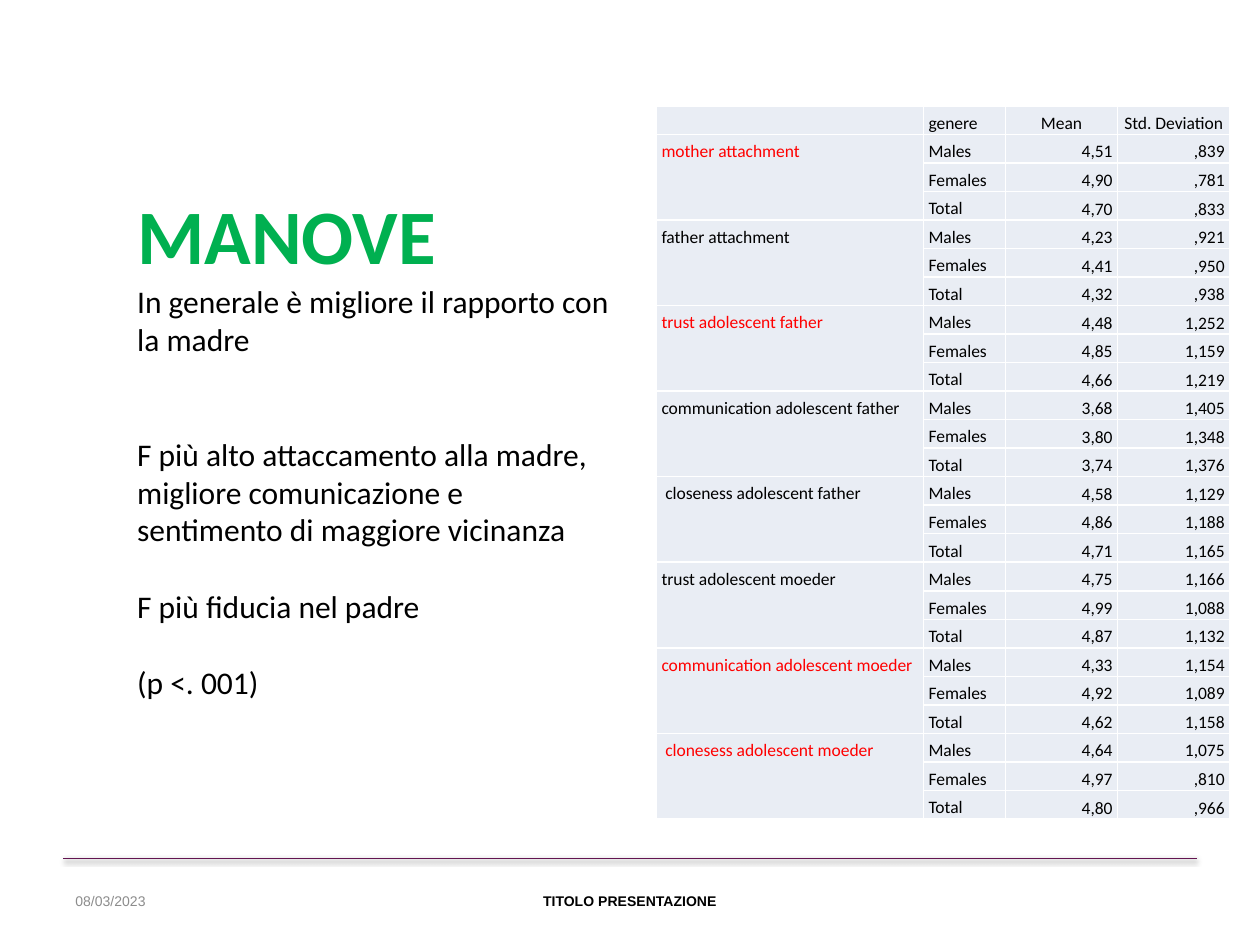
from dataclasses import dataclass

from lxml import etree
from pptx import Presentation
from pptx.dml.color import RGBColor
from pptx.enum.shapes import MSO_CONNECTOR
from pptx.enum.text import MSO_ANCHOR, MSO_AUTO_SIZE, PP_ALIGN
from pptx.oxml.ns import qn
from pptx.util import Inches, Pt

LEFT, CENTER, RIGHT = PP_ALIGN.LEFT, PP_ALIGN.CENTER, PP_ALIGN.RIGHT
TOP, MIDDLE, BOTTOM = MSO_ANCHOR.TOP, MSO_ANCHOR.MIDDLE, MSO_ANCHOR.BOTTOM
STRAIGHT = MSO_CONNECTOR.STRAIGHT
NO_AUTO_SIZE = MSO_AUTO_SIZE.NONE


@dataclass(frozen=True)
class Theme:
    text: RGBColor = RGBColor(0, 0, 0)
    title: RGBColor = RGBColor(0x00, 0xB0, 0x50)
    highlight: RGBColor = RGBColor(0xFF, 0, 0)
    muted: RGBColor = RGBColor(0x8C, 0x8C, 0x8C)
    rule: RGBColor = RGBColor(0x63, 0x14, 0x50)
    cell: RGBColor = RGBColor(0xE9, 0xED, 0xF4)
    border: str = "FFFFFF"
    main_font: str = "Calibri"
    footer_font: str = "Arial"
    title_size: int = 44
    body_size: int = 18
    table_size: int = 10
    table_leading: int = 16
    footer_size: int = 8


THEME = Theme()
TITLE = "MANOVE"
FINDINGS = [
    ("In generale è migliore il rapporto con la madre", 0),
    ("F più alto attaccamento alla madre, migliore comunicazione e "
     "sentimento di maggiore vicinanza", 44),
    ("F più fiducia nel padre", 22),
    ("(p <. 001)", 22),
]
HEADERS = ["", "genere", "Mean", "Std. Deviation"]
GENDERS = ["Males", "Females", "Total"]
COLUMN_WIDTHS = [2.12, 0.65, 0.89, 0.89]
CELL_INDENT, DEEP_INDENT = 0.04, 0.07
SCALES = [
    ("mother attachment", True, CELL_INDENT,
     [("4,51", ",839"), ("4,90", ",781"), ("4,70", ",833")]),
    ("father attachment", False, CELL_INDENT,
     [("4,23", ",921"), ("4,41", ",950"), ("4,32", ",938")]),
    ("trust adolescent father", True, CELL_INDENT,
     [("4,48", "1,252"), ("4,85", "1,159"), ("4,66", "1,219")]),
    ("communication adolescent father", False, CELL_INDENT,
     [("3,68", "1,405"), ("3,80", "1,348"), ("3,74", "1,376")]),
    ("closeness adolescent father", False, DEEP_INDENT,
     [("4,58", "1,129"), ("4,86", "1,188"), ("4,71", "1,165")]),
    ("trust adolescent moeder", False, CELL_INDENT,
     [("4,75", "1,166"), ("4,99", "1,088"), ("4,87", "1,132")]),
    ("communication adolescent moeder", True, CELL_INDENT,
     [("4,33", "1,154"), ("4,92", "1,089"), ("4,62", "1,158")]),
    ("clonesess adolescent moeder", True, DEEP_INDENT,
     [("4,64", "1,075"), ("4,97", ",810"), ("4,80", ",966")]),
]


def style_paragraph(paragraph, size, color, font=THEME.main_font, bold=False, align=LEFT):
    paragraph.alignment = align
    paragraph.font.size = Pt(size)
    paragraph.font.name = font
    paragraph.font.bold = bold
    paragraph.font.color.rgb = color


def add_text_box(slide, left, top, width, height, anchor=TOP):
    shape = slide.shapes.add_textbox(Inches(left), Inches(top), Inches(width), Inches(height))
    frame = shape.text_frame
    frame.word_wrap = True
    frame.vertical_anchor = anchor
    return frame


def add_findings(slide, left, top, width, height):
    title_height = 0.75
    title = slide.shapes.title
    title.left, title.top = Inches(left), Inches(top)
    title.width, title.height = Inches(width), Inches(title_height)
    frame = title.text_frame
    frame.text = TITLE
    frame.vertical_anchor = TOP
    frame.auto_size = NO_AUTO_SIZE
    style_paragraph(frame.paragraphs[0], THEME.title_size, THEME.title, bold=True)

    frame = add_text_box(slide, left, top + title_height, width, height - title_height)
    for index, (text, gap) in enumerate(FINDINGS):
        paragraph = frame.add_paragraph() if index else frame.paragraphs[0]
        paragraph.text = text
        if gap:
            paragraph.space_before = Pt(gap)
        style_paragraph(paragraph, THEME.body_size, THEME.text)


def add_borders(cell):
    properties = cell._tc.get_or_add_tcPr()
    for index, side in enumerate(("lnL", "lnR", "lnT", "lnB")):
        line = etree.Element(qn(f"a:{side}"), w=str(Pt(1)))
        fill = etree.SubElement(line, qn("a:solidFill"))
        etree.SubElement(fill, qn("a:srgbClr"), val=THEME.border)
        properties.insert(index, line)


def fill_cell(cell, text, anchor=TOP, align=LEFT, color=THEME.text, indent=CELL_INDENT):
    cell.margin_left = cell.margin_right = cell.margin_top = cell.margin_bottom = 0
    cell.vertical_anchor = anchor
    cell.fill.solid()
    cell.fill.fore_color.rgb = THEME.cell
    add_borders(cell)
    paragraph = cell.text_frame.paragraphs[0]
    if text:
        paragraph.text = text
    properties = paragraph._p.get_or_add_pPr()
    properties.set("marL", str(Inches(indent)))
    properties.set("marR", str(Inches(CELL_INDENT)))
    paragraph.line_spacing = Pt(THEME.table_leading)
    style_paragraph(paragraph, THEME.table_size, color, align=align)


def add_scale_table(slide, left, top, width, height):
    row_count = 1 + len(SCALES) * len(GENDERS)
    table = slide.shapes.add_table(row_count, len(HEADERS), Inches(left), Inches(top),
                                   Inches(width), Inches(height)).table
    table.first_row = table.horz_banding = False
    for column, column_width in zip(table.columns, COLUMN_WIDTHS):
        column.width = Inches(column_width)
    for row in table.rows:
        row.height = Inches(height / row_count)
    for column, header in enumerate(HEADERS):
        fill_cell(table.cell(0, column), header, BOTTOM, CENTER if column > 1 else LEFT)
    for scale, (label, highlighted, indent, values) in enumerate(SCALES):
        first_row = 1 + scale * len(GENDERS)
        color = THEME.highlight if highlighted else THEME.text
        for offset, (gender, numbers) in enumerate(zip(GENDERS, values)):
            row = first_row + offset
            fill_cell(table.cell(row, 0), "" if offset else label, color=color, indent=indent)
            fill_cell(table.cell(row, 1), gender)
            for column, number in enumerate(numbers, 2):
                fill_cell(table.cell(row, column), number, MIDDLE, RIGHT)
        table.cell(first_row, 0).merge(table.cell(first_row + len(GENDERS) - 1, 0))


def add_rule(slide, left, top, width):
    rule = slide.shapes.add_connector(STRAIGHT, Inches(left), Inches(top),
                                      Inches(left + width), Inches(top))
    rule.line.color.rgb = THEME.rule
    rule.line.width = Pt(0.5)
    effects = etree.SubElement(rule._element.spPr, qn("a:effectLst"))
    shadow = etree.SubElement(effects, qn("a:outerShdw"), blurRad=str(Pt(3.1)),
                              dist=str(Pt(1.6)), dir="5400000", rotWithShape="0")
    color = etree.SubElement(shadow, qn("a:srgbClr"), val="000000")
    etree.SubElement(color, qn("a:alpha"), val="38000")


def add_footer(slide, left, top, width):
    add_rule(slide, left, top, width)
    label_top, label_height = top + 0.14, 0.4
    date = add_text_box(slide, left, label_top, 2.33, label_height, MIDDLE).paragraphs[0]
    date.text = "08/03/2023"
    style_paragraph(date, THEME.footer_size, THEME.muted, THEME.footer_font)
    label_width = 3.17
    label = add_text_box(slide, left + (width - label_width) / 2, label_top,
                         label_width, label_height, MIDDLE).paragraphs[0]
    label.text = "TITOLO PRESENTAZIONE"
    style_paragraph(label, THEME.footer_size, THEME.text, THEME.footer_font, True, CENTER)


def main():
    presentation = Presentation()
    presentation.slide_width, presentation.slide_height = Inches(10), Inches(7.5)
    slide = presentation.slides.add_slide(presentation.slide_layouts[5])
    add_findings(slide, 0.99, 1.44, 3.99, 5.08)
    add_scale_table(slide, 5.21, 0.84, 4.55, 5.66)
    add_footer(slide, 0.5, 6.81, 9)
    presentation.save("out.pptx")


if __name__ == "__main__":
    main()
